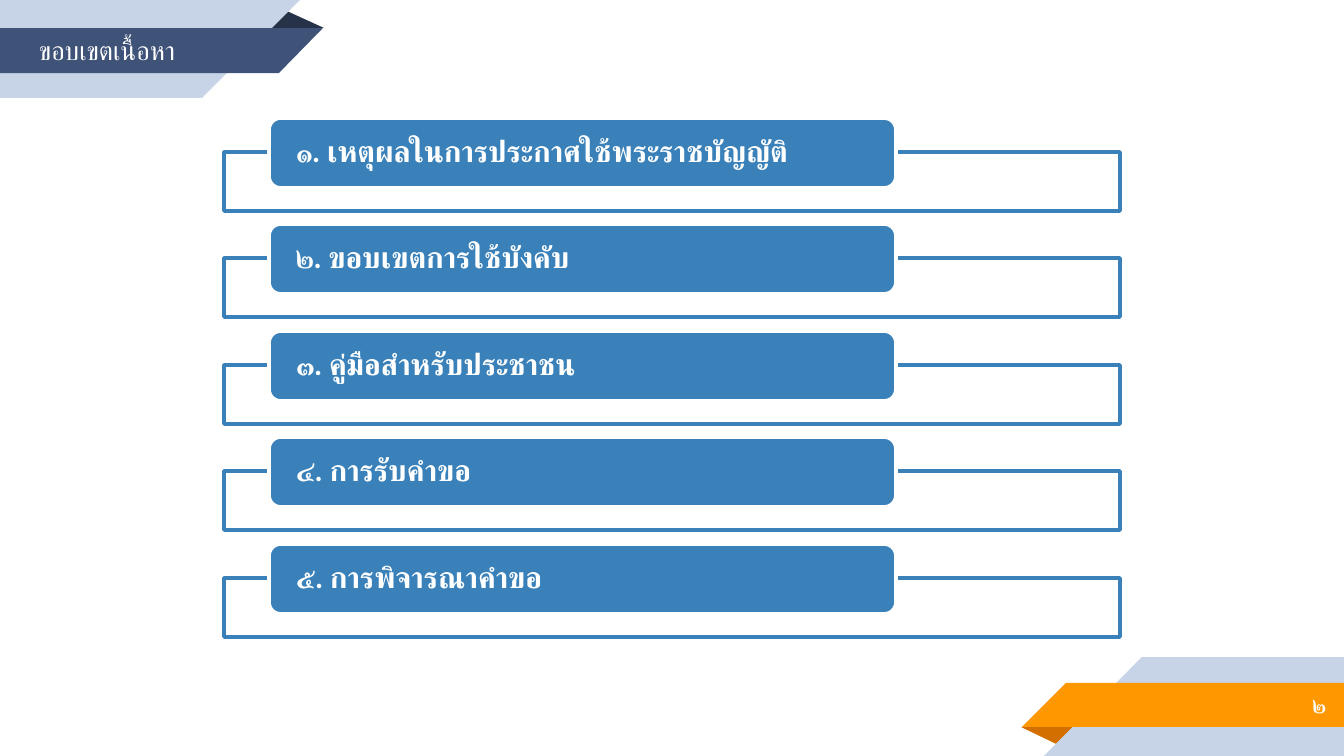
from lxml.etree import SubElement
from pptx import Presentation
from pptx.dml.color import RGBColor
from pptx.enum.shapes import MSO_SHAPE
from pptx.enum.text import MSO_ANCHOR, MSO_AUTO_SIZE, PP_ALIGN
from pptx.oxml.ns import qn
from pptx.util import Pt

EMU_PER_PX = 914400 / 134.4
WHITE, BLUE, NAVY, DARK_NAVY = "FFFFFF", "3A81BA", "3F5378", "263248"
PALE, ORANGE, DARK_ORANGE = "C7D3E6", "FF9800", "D26F00"

TOPICS = [
    "๑. เหตุผลในการประกาศใช้พระราชบัญญัติ",
    "๒. ขอบเขตการใช้บังคับ",
    "๓. คู่มือสำหรับประชาชน",
    "๔. การรับคำขอ",
    "๕. การพิจารณาคำขอ",
]


def px(*values):
    return [round(v * EMU_PER_PX) for v in values]


def paint(color_format, color):
    color_format.rgb = RGBColor.from_string(color)


def write(sp, text, size, bold=False, align=PP_ALIGN.LEFT, inset=(13, 13), spacing=1.0):
    """Fill a shape with one white paragraph; inset is (sides, top and bottom)."""
    tf = sp.text_frame
    tf.word_wrap = True
    tf.auto_size = MSO_AUTO_SIZE.NONE
    tf.vertical_anchor = MSO_ANCHOR.MIDDLE
    tf.margin_left, tf.margin_right = px(inset[0], inset[0])
    tf.margin_top, tf.margin_bottom = px(inset[1], inset[1])
    p = tf.paragraphs[0]
    p.alignment = align
    p.line_spacing = spacing
    r = p.add_run()
    r.text = text
    r.font.size, r.font.bold, r.font.name = Pt(size), bold, "Lato"
    paint(r.font.fill_color if hasattr(r.font, "fill_color") else r.font.color, WHITE)
    # Thai is shaped with the complex-script font
    SubElement(r.font._element, qn("a:cs")).set("typeface", "Lato")


class Deck:
    def __init__(self, width, height):
        self.prs = Presentation()
        self.prs.slide_width, self.prs.slide_height = px(width, height)
        self.s = self.prs.slides.add_slide(self.prs.slide_layouts[5])

    def shape(self, kind, box, fill, line=None, rotation=0, flip=False, alpha=None):
        sp = self.s.shapes.add_shape(kind, *px(*box))
        sp.shadow.inherit = False
        sp.rotation = rotation
        if flip:
            sp._element.spPr.xfrm.set("flipH", "1")
        sp.fill.solid()
        paint(sp.fill.fore_color, fill)
        if alpha:
            color = sp._element.spPr.find(qn("a:solidFill"))[0]
            SubElement(color, qn("a:alpha")).set("val", str(alpha * 1000))
        if line:
            paint(sp.line.color, line)
            sp.line.width = Pt(2)
        else:
            sp.line.fill.background()
        return sp

    def fold(self, box, fill, rotation=0):
        self.shape(MSO_SHAPE.ISOSCELES_TRIANGLE, box, fill,
                   rotation=rotation).adjustments[0] = 0.32

    def band(self, bar, slant, fill, rotation=0):
        """A bar with a slanted end, made of a rectangle and a right triangle."""
        self.shape(MSO_SHAPE.RECTANGLE, bar, fill, rotation=rotation, flip=True)
        self.shape(MSO_SHAPE.RIGHT_TRIANGLE, slant, fill, rotation=rotation, flip=True)

    def title(self, box, text):
        sp = self.s.shapes.title
        sp.left, sp.top, sp.width, sp.height = px(*box)
        write(sp, text, 14)
        self.s.shapes._spTree.append(sp._element)  # in front of the ribbon

    def text(self, box, text, size, **style):
        write(self.s.shapes.add_textbox(*px(*box)), text, size, **style)

    def topic(self, top, text):
        self.shape(MSO_SHAPE.RECTANGLE, (224, top + 34, 896, 59), WHITE, BLUE, alpha=90)
        card = self.shape(MSO_SHAPE.ROUNDED_RECTANGLE, (269, top, 627, 70), BLUE, WHITE)
        write(card, text, 16, bold=True, inset=(24, 0), spacing=0.9)


def main():
    deck = Deck(1344, 756)

    deck.fold((1021, 727, 58, 19), DARK_ORANGE, rotation=180)
    deck.band((1142, 657, 202, 99), (1044, 657, 98, 99), PALE)
    deck.band((1066, 683, 278, 44), (1022, 683, 44, 44), ORANGE)

    deck.fold((266, 10, 58, 18), DARK_NAVY)
    deck.band((0, 0, 202, 98), (202, 0, 98, 98), PALE, rotation=180)
    deck.band((0, 28, 279, 45), (279, 28, 44, 45), NAVY, rotation=180)

    deck.text((1120, 681, 219, 47), "๒", 12, bold=True, align=PP_ALIGN.RIGHT)
    deck.title((26, 30, 296, 40), "ขอบเขตเนื้อหา")
    for i, topic in enumerate(TOPICS):
        deck.topic(118 + i * 213 // 2, topic)

    deck.prs.save("out.pptx")


if __name__ == "__main__":
    main()
